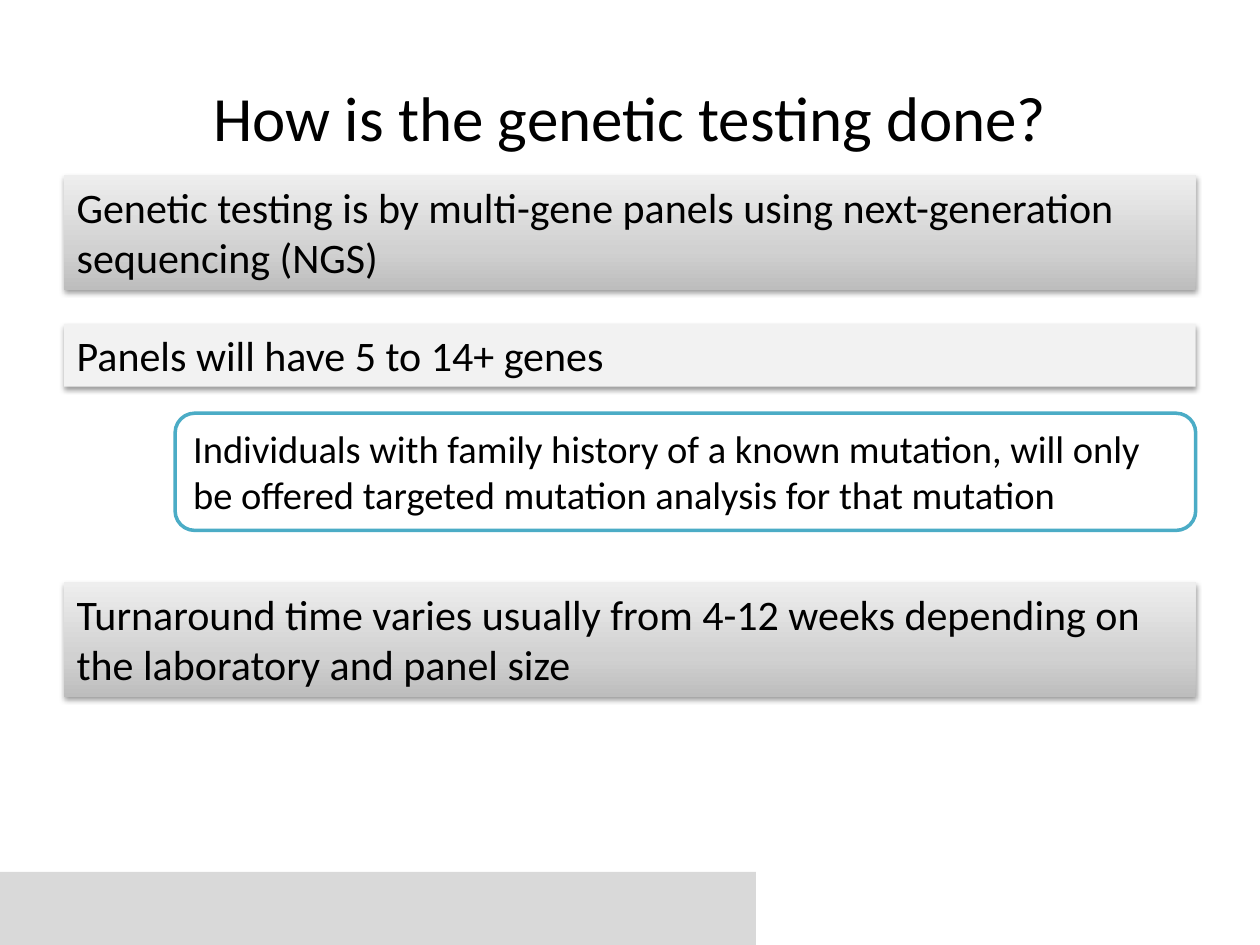
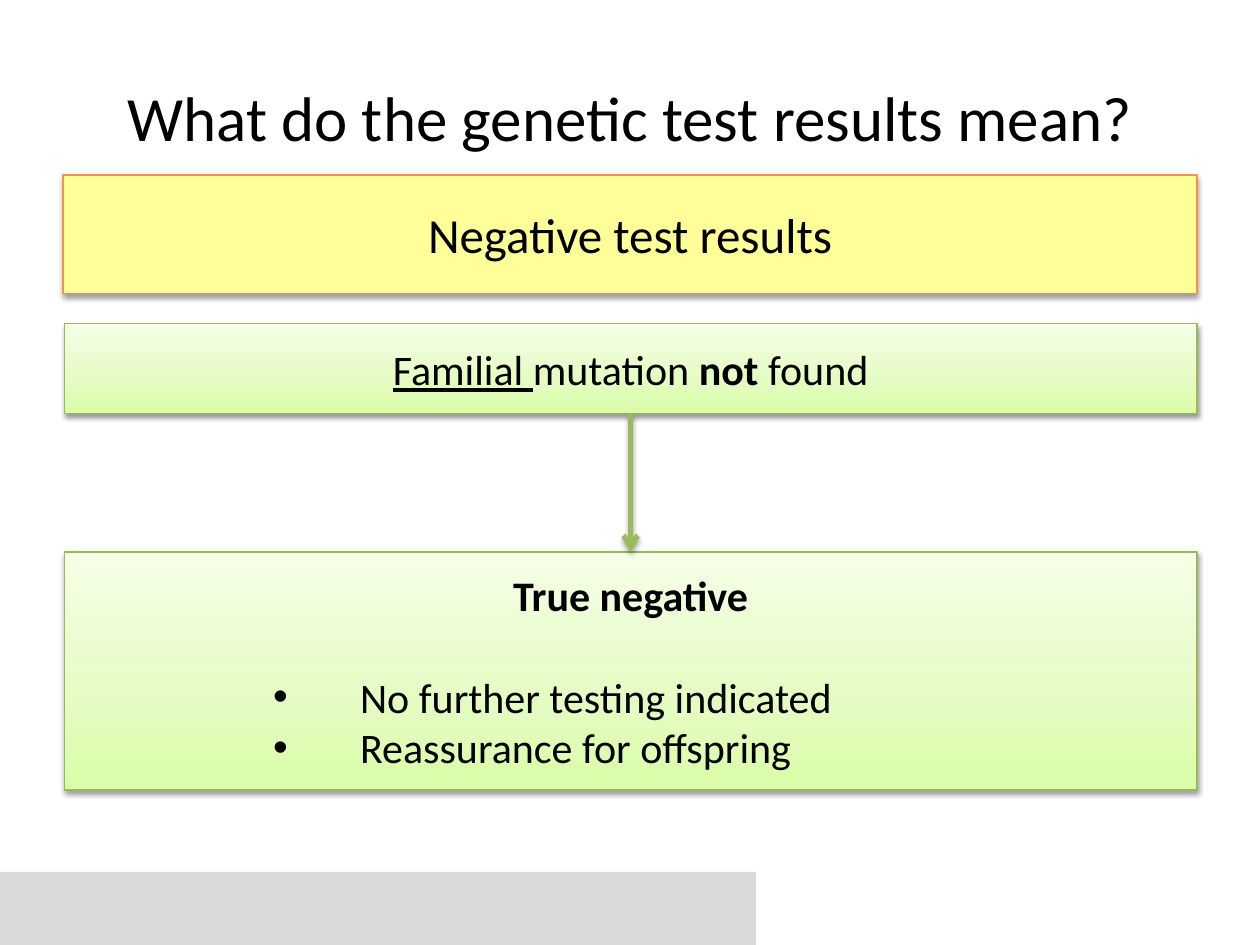
from dataclasses import dataclass

from lxml import etree
from pptx import Presentation
from pptx.dml.color import RGBColor
from pptx.enum.shapes import MSO_CONNECTOR, MSO_SHAPE
from pptx.enum.text import MSO_ANCHOR, MSO_AUTO_SIZE, PP_ALIGN
from pptx.oxml.ns import qn
from pptx.util import Inches, Pt

RECTANGLE, ROUNDED = MSO_SHAPE.RECTANGLE, MSO_SHAPE.ROUNDED_RECTANGLE
LEFT, CENTER = PP_ALIGN.LEFT, PP_ALIGN.CENTER
TOP, MIDDLE = MSO_ANCHOR.TOP, MSO_ANCHOR.MIDDLE

FONT = "Calibri"
BLACK, WHITE = "000000", "FFFFFF"
BAND_GRAY, PANEL_GRAY = "D9D9D9", "F2F2F2"
TEAL, YELLOW, ORANGE = "4BACC6", "FFFF99", "F69240"
GREEN_BORDER, GREEN_ARROW = "98B955", "9BBB59"
# Gradients run from the bottom edge to the top edge.
GRAY_GRADIENT = ("BDBDBD", "D1D1D1", "EEEEEE")
GREEN_GRADIENT = ("DAFDA7", "E4FCC2", "F5FFE7")
GRADIENT_POSITIONS = (0, 35, 100)

BOX_LEFT = 0.51


@dataclass
class Run:
    text: str
    bold: bool = False
    underline: bool = False


@dataclass
class TextLine:
    runs: list[Run]
    bullet: bool = False
    space_before: float = 0


@dataclass
class Box:
    left: float
    top: float
    width: float
    height: float
    fill: str | tuple[str, ...]
    text: str | list[TextLine] = ""
    size: float = 24
    alignment: PP_ALIGN = LEFT
    anchor: MSO_ANCHOR = TOP
    border: str | None = None
    border_width: float = 0.75
    geometry: MSO_SHAPE = RECTANGLE
    shadow: bool = True


def color(value: str) -> RGBColor:
    return RGBColor.from_string(value)


def add_child(parent, tag: str, **attributes):
    child = etree.SubElement(parent, qn(tag))
    for name, value in attributes.items():
        child.set(name, str(value))
    return child


def add_outer_shadow(effects, opacity: int, distance: float) -> None:
    shadow = add_child(effects, "a:outerShdw", blurRad=Pt(3.1), dist=Pt(distance),
                       dir=90 * 60000, rotWithShape=0)
    shade = add_child(shadow, "a:srgbClr", val=BLACK)
    add_child(shade, "a:alpha", val=opacity * 1000)


def fill_gradient(shape, colors: tuple[str, ...]) -> None:
    shape.fill.gradient()
    shape.fill.gradient_angle = 90
    stops = next(shape.element.spPr.iter(qn("a:gsLst")))
    for stop in list(stops):
        stops.remove(stop)
    for position, value in zip(GRADIENT_POSITIONS, colors):
        stop = add_child(stops, "a:gs", pos=position * 1000)
        add_child(stop, "a:srgbClr", val=value)


def add_bullet(paragraph) -> None:
    properties = paragraph._p.get_or_add_pPr()
    properties.set("marL", str(Inches(2.25)))
    properties.set("indent", str(Inches(-0.69)))
    add_child(properties, "a:buFont", typeface="Arial")
    add_child(properties, "a:buChar", char="•")


def write_text(shape, text: str | list[TextLine], *, size: float,
               alignment: PP_ALIGN = LEFT, anchor: MSO_ANCHOR = TOP) -> None:
    frame = shape.text_frame
    frame.word_wrap = True
    frame.auto_size = MSO_AUTO_SIZE.NONE
    frame.vertical_anchor = anchor
    lines = [TextLine([Run(text)])] if isinstance(text, str) else text
    for index, line in enumerate(lines):
        paragraph = frame.add_paragraph() if index else frame.paragraphs[0]
        paragraph.alignment = LEFT if line.bullet else alignment
        if line.space_before:
            paragraph.space_before = Pt(line.space_before)
        if line.bullet:
            add_bullet(paragraph)
        for part in line.runs:
            run = paragraph.add_run()
            run.text = part.text
            run.font.name, run.font.size = FONT, Pt(size)
            run.font.bold, run.font.underline = part.bold, part.underline
            run.font.color.rgb = color(BLACK)


def add_box(slide, box: Box):
    shape = slide.shapes.add_shape(box.geometry, Inches(box.left), Inches(box.top),
                                   Inches(box.width), Inches(box.height))
    if isinstance(box.fill, tuple):
        fill_gradient(shape, box.fill)
    else:
        shape.fill.solid()
        shape.fill.fore_color.rgb = color(box.fill)
    if box.border:
        shape.line.color.rgb = color(box.border)
        shape.line.width = Pt(box.border_width)
    else:
        shape.line.fill.background()
    shape.shadow.inherit = False
    if box.shadow:
        add_outer_shadow(shape.element.spPr.find(qn("a:effectLst")), 38, 1.6)
    if box.text:
        write_text(shape, box.text, size=box.size, alignment=box.alignment,
                   anchor=box.anchor)
    return shape


def add_down_arrow(slide, upper, lower) -> None:
    """Join the bottom of the upper box to the top of the lower one."""
    connector = slide.shapes.add_connector(MSO_CONNECTOR.STRAIGHT, 0, 0, 0, 0)
    connector.begin_connect(upper, 2)
    connector.end_connect(lower, 0)
    connector.line.color.rgb = color(GREEN_ARROW)
    connector.line.width = Pt(3)
    properties = connector.element.spPr
    add_child(properties.find(qn("a:ln")), "a:tailEnd", type="arrow")
    add_outer_shadow(add_child(properties, "a:effectLst"), 35, 1.8)


def add_titled_slide(presentation, title: str):
    slide = presentation.slides.add_slide(presentation.slide_layouts[6])
    add_box(slide, Box(0, 6.92, 6, 0.58, BAND_GRAY, shadow=False))
    title_box = slide.shapes.add_textbox(Inches(0.5), Inches(0.3), Inches(9), Inches(1.25))
    write_text(title_box, title, size=36, alignment=CENTER, anchor=MIDDLE)
    return slide


def build_testing_slide(presentation) -> None:
    slide = add_titled_slide(presentation, "How is the genetic testing done?")
    statements = (
        (1.39, 0.91, GRAY_GRADIENT,
         "Genetic testing is by multi-gene panels using next-generation sequencing (NGS)"),
        (2.57, 0.5, PANEL_GRAY, "Panels will have 5 to 14+ genes"),
        (4.62, 0.91, GRAY_GRADIENT,
         "Turnaround time varies usually from 4-12 weeks depending on the laboratory "
         "and panel size"),
    )
    for top, height, fill, text in statements:
        add_box(slide, Box(BOX_LEFT, top, 8.98, height, fill, text))
    add_box(slide, Box(
        1.39, 3.28, 8.1, 0.93, WHITE,
        "Individuals with family history of a known mutation, will only be offered "
        "targeted mutation analysis for that mutation",
        size=22, border=TEAL, border_width=2, geometry=ROUNDED, shadow=False))


def add_green_box(slide, top: float, height: float, lines: list[TextLine]):
    return add_box(slide, Box(BOX_LEFT, top, 8.99, height, GREEN_GRADIENT, lines,
                              alignment=CENTER, anchor=MIDDLE, border=GREEN_BORDER))


def build_results_slide(presentation) -> None:
    slide = add_titled_slide(presentation, "What do the genetic test results mean?")
    finding = add_green_box(slide, 2.57, 0.71, [TextLine([
        Run("Familial ", underline=True), Run("mutation "),
        Run("not", bold=True), Run(" found")])])
    add_box(slide, Box(0.5, 1.39, 9, 0.94, YELLOW, "Negative test results", size=28,
                       alignment=CENTER, anchor=MIDDLE, border=ORANGE))
    meaning = add_green_box(slide, 4.38, 1.89, [
        TextLine([Run("True negative", bold=True)]),
        TextLine([Run("No further testing indicated")], bullet=True, space_before=29),
        TextLine([Run("Reassurance for offspring")], bullet=True)])
    add_down_arrow(slide, finding, meaning)


def main() -> None:
    presentation = Presentation()
    presentation.slide_width, presentation.slide_height = Inches(10), Inches(7.5)
    build_testing_slide(presentation)
    build_results_slide(presentation)
    presentation.save("out.pptx")


if __name__ == "__main__":
    main()
